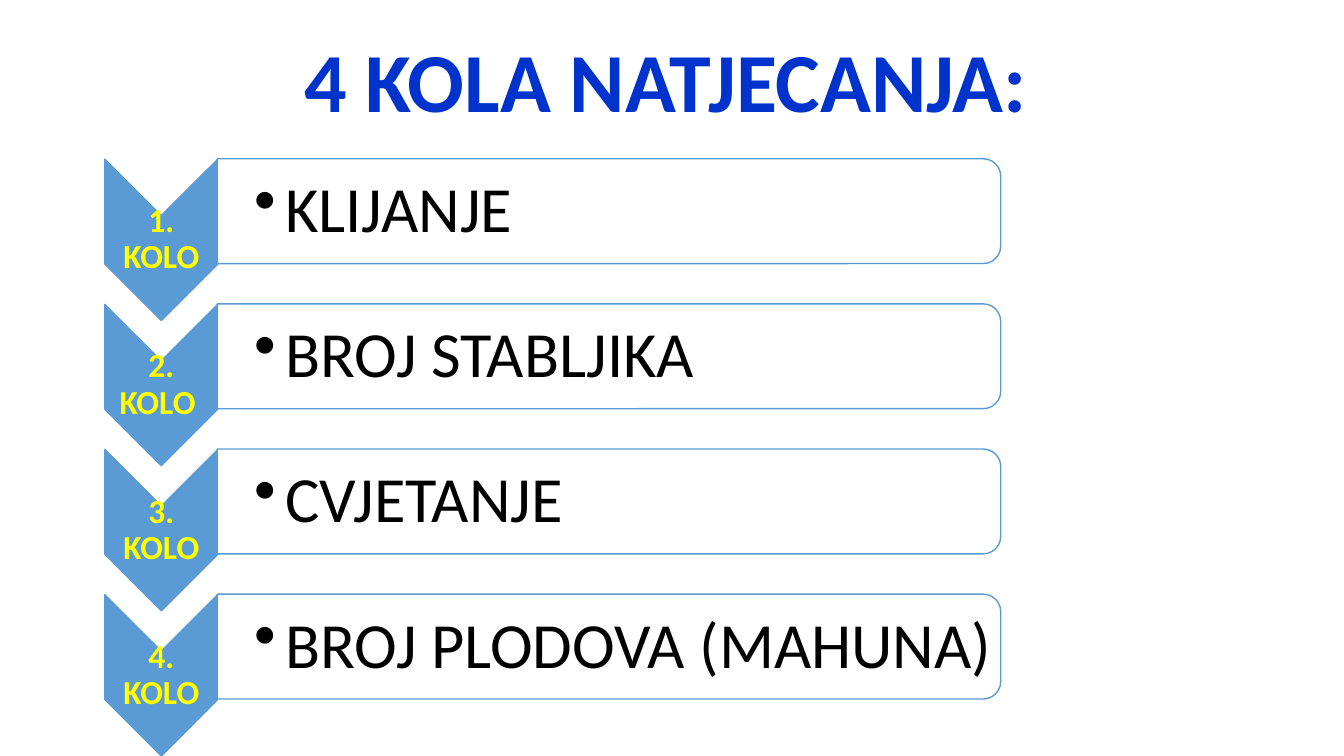
from lxml import etree
from pptx import Presentation
from pptx.dml.color import RGBColor
from pptx.enum.shapes import MSO_SHAPE
from pptx.enum.text import MSO_ANCHOR, PP_ALIGN
from pptx.oxml.ns import qn
from pptx.util import Inches, Pt

CHEVRON = MSO_SHAPE.CHEVRON
ROUNDED_TOP = MSO_SHAPE.ROUND_2_SAME_RECTANGLE
MIDDLE = MSO_ANCHOR.MIDDLE
LEFT = PP_ALIGN.LEFT
CENTER = PP_ALIGN.CENTER

FONT = "Calibri"
COLORS = {
    "title": "0033CC",
    "accent": "5B9BD5",
    "panel": "FFFFFF",
    "label": "FFFF00",
    "topic": "000000",
}
ROUNDS = [
    ("1. KOLO", "KLIJANJE"),
    ("2. KOLO ", "BROJ STABLJIKA"),
    ("3. KOLO", "CVJETANJE"),
    ("4. KOLO", "BROJ PLODOVA (MAHUNA)"),
]
FIRST_TOP = 1.57
ROW_STEP = 1.44


def color(name):
    return RGBColor.from_string(COLORS[name])


def write_text(text_frame, text, size, color_name, bold, alignment):
    text_frame.word_wrap = True
    text_frame.vertical_anchor = MIDDLE
    paragraph = text_frame.paragraphs[0]
    paragraph.alignment = alignment
    paragraph.line_spacing = 0.9
    run = paragraph.add_run()
    run.text = text
    run.font.name = FONT
    run.font.size = Pt(size)
    run.font.bold = bold
    run.font.color.rgb = color(color_name)
    return paragraph


def add_title(slide, text):
    title = slide.shapes.title
    title.left, title.top = Inches(0.85), Inches(0.12)
    title.width, title.height = Inches(11.5), Inches(1.45)
    write_text(title.text_frame, text, 60, "title", True, CENTER)


def add_turned_shape(slide, kind, left, top, width, height, fill_name):
    shape = slide.shapes.add_shape(
        kind, Inches(left), Inches(top), Inches(width), Inches(height))
    shape.rotation = 90
    shape.shadow.inherit = False
    shape.fill.solid()
    shape.fill.fore_color.rgb = color(fill_name)
    shape.line.color.rgb = color("accent")
    shape.line.width = Pt(1)
    return shape


def set_opacity(shape, percent):
    fill_color = shape.fill._xPr.find(qn("a:solidFill"))[0]
    etree.SubElement(fill_color, qn("a:alpha"), val=str(percent * 1000))


def add_text_box(slide, left, top, width, height, left_inset, inset):
    box = slide.shapes.add_textbox(
        Inches(left), Inches(top), Inches(width), Inches(height))
    text_frame = box.text_frame
    text_frame.margin_left = Inches(left_inset)
    text_frame.margin_top = Inches(inset)
    text_frame.margin_right = Inches(inset)
    text_frame.margin_bottom = Inches(inset)
    return text_frame


def add_bullet(paragraph, indent):
    paragraph.level = 1
    properties = paragraph._p.get_or_add_pPr()
    properties.set("marL", str(Inches(indent)))
    properties.set("indent", str(-Inches(indent)))
    etree.SubElement(properties, qn("a:buChar"), char="•")


def add_round(slide, top, label, topic):
    add_turned_shape(slide, CHEVRON, 0.8, top + 0.25, 1.6, 1.12, "accent")
    label_frame = add_text_box(slide, 1.04, top + 0.57, 1.12, 0.48, 0.02, 0.02)
    write_text(label_frame, label, 24, "label", True, CENTER)

    panel = add_turned_shape(
        slide, ROUNDED_TOP, 5.52, top - 3.36, 1.04, 7.77, "panel")
    set_opacity(panel, 90)
    topic_frame = add_text_box(slide, 2.16, top + 0.06, 7.72, 0.94, 0.36, 0.03)
    paragraph = write_text(topic_frame, topic, 46, "topic", False, LEFT)
    add_bullet(paragraph, 0.31)


def main():
    presentation = Presentation()
    presentation.slide_width = Inches(13.33)
    presentation.slide_height = Inches(7.5)
    slide = presentation.slides.add_slide(presentation.slide_layouts[5])
    add_title(slide, "4 KOLA NATJECANJA:")
    for index, (label, topic) in enumerate(ROUNDS):
        add_round(slide, FIRST_TOP + index * ROW_STEP, label, topic)
    presentation.save("out.pptx")


if __name__ == "__main__":
    main()
